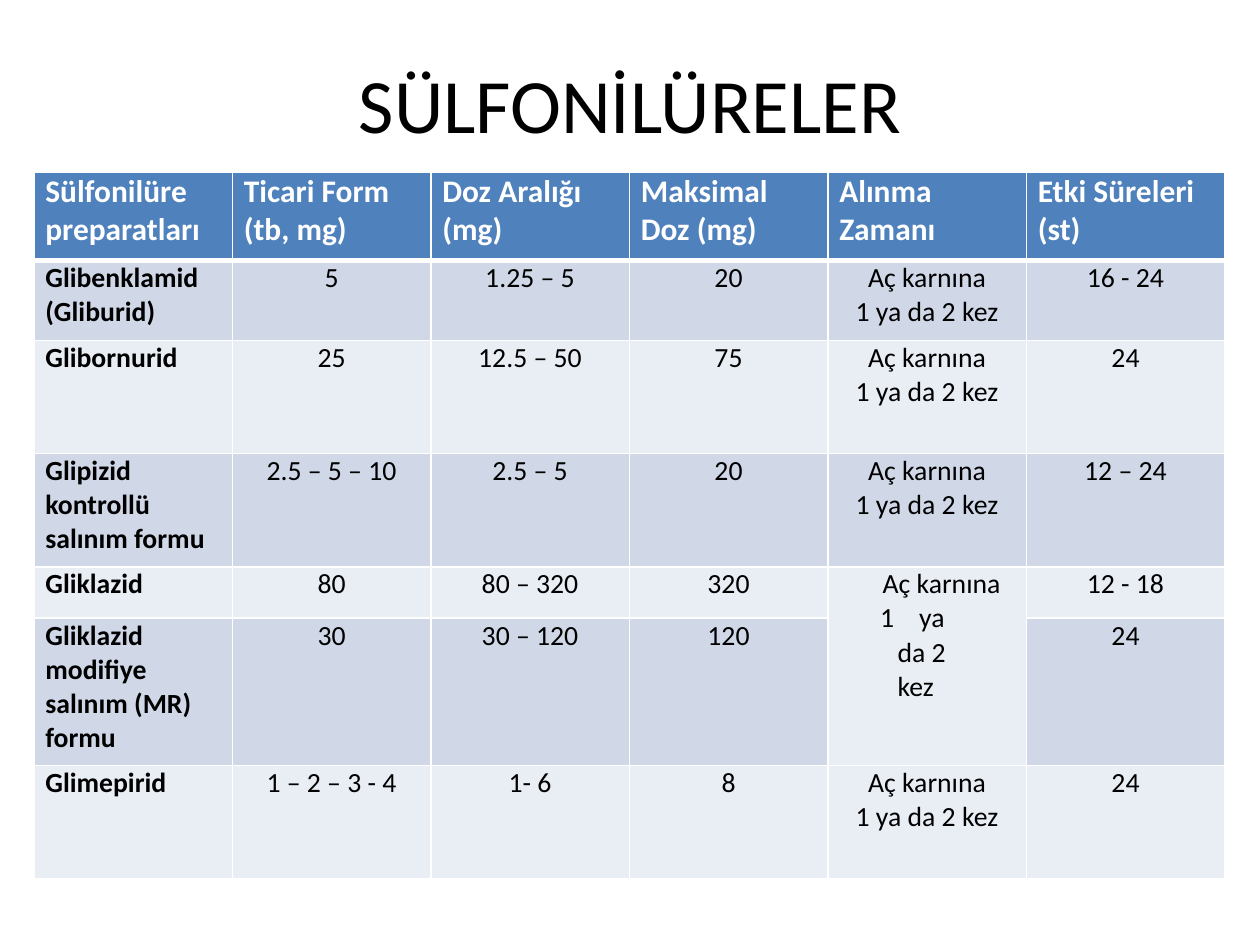
from dataclasses import dataclass

from lxml.etree import SubElement
from pptx import Presentation
from pptx.dml.color import RGBColor
from pptx.enum.text import MSO_ANCHOR, PP_ALIGN
from pptx.oxml.ns import qn
from pptx.util import Cm, Pt

WHITE = RGBColor(0xFF, 0xFF, 0xFF)
BLACK = RGBColor(0x00, 0x00, 0x00)
HEADER_BLUE = RGBColor(0x4F, 0x81, 0xBD)
BAND_DARK = RGBColor(0xD0, 0xD8, 0xE8)
BAND_LIGHT = RGBColor(0xE9, 0xED, 0xF4)

THIN, THICK = Pt(1.42), Pt(4.27)
TEXT_INDENT = Cm(0.33)


@dataclass(frozen=True)
class TextStyle:
    size: float
    color: RGBColor
    bold: bool = False
    alignment: PP_ALIGN = PP_ALIGN.CENTER
    indent: int = 0
    line_spacing: float = 1.0


TITLE = TextStyle(62.5, BLACK)
HEADER = TextStyle(25.5, WHITE, True, PP_ALIGN.LEFT, TEXT_INDENT)
DRUG_NAME = TextStyle(22.5, BLACK, True, PP_ALIGN.LEFT, TEXT_INDENT, 1.01)
VALUE = TextStyle(22.5, BLACK, line_spacing=1.01)
SHARED_TIMING = TextStyle(22.5, BLACK, False, PP_ALIGN.LEFT, Cm(1.57), 1.01)

TIMING = "Aç karnına\n1 ya da 2 kez"
ROWS = [
    ["Sülfonilüre\npreparatları", "Ticari Form\n(tb, mg)", "Doz Aralığı\n(mg)",
     "Maksimal\nDoz (mg)", "Alınma\nZamanı", "Etki Süreleri\n(st)"],
    ["Glibenklamid (Gliburid)", "5", "1.25 – 5", "20", TIMING, "16 - 24"],
    ["Glibornurid", "25", "12.5 – 50", "75", TIMING, "24"],
    ["Glipizid kontrollü salınım formu", "2.5 – 5 – 10", "2.5 – 5", "20", TIMING, "12 – 24"],
    ["Gliklazid", "80", "80 – 320", "320", "Aç karnına\n1\t\tya da 2 kez", "12 - 18"],
    ["Gliklazid modifiye salınım (MR) formu", "30", "30 – 120", "120", "", "24"],
    ["Glimepirid", "1 – 2 – 3 - 4", "1- 6", "8", TIMING, "24"],
]
ROW_HEIGHTS = [2.52, 2.29, 3.25, 3.25, 1.47, 4.22, 3.25]
COLUMN_WIDTH = Cm(5.69)
TIMING_COLUMN = 4
SHARED_ROW = 4


def set_attributes(target: object, values: dict) -> None:
    for name, value in values.items():
        setattr(target, name, value)


def write_text(text_frame, text: str, style: TextStyle) -> None:
    """Write one paragraph per line of text."""
    for index, line in enumerate(text.split("\n")):
        paragraph = text_frame.paragraphs[0] if index == 0 else text_frame.add_paragraph()
        paragraph.add_run().text = line
        if style.indent:
            paragraph._p.get_or_add_pPr().set("marL", str(style.indent))
        set_attributes(paragraph, {"alignment": style.alignment,
                                   "line_spacing": style.line_spacing})
        for run in paragraph.runs:
            set_attributes(run.font, {"name": "Calibri", "size": Pt(style.size),
                                      "bold": style.bold})
            run.font.color.rgb = style.color


def set_borders(cell, top: int, bottom: int) -> None:
    properties = cell._tc.get_or_add_tcPr()
    widths = {"a:lnL": THIN, "a:lnR": THIN, "a:lnT": top, "a:lnB": bottom}
    for position, (tag, width) in enumerate(widths.items()):
        line = properties.makeelement(qn(tag), {"w": str(width)})
        properties.insert(position, line)
        fill = SubElement(line, qn("a:solidFill"))
        SubElement(fill, qn("a:srgbClr"), val=str(WHITE))


def hang_shared_timing(paragraph) -> None:
    """Give the second line of the merged cell its hanging indent and tab stop."""
    properties = paragraph._p.get_or_add_pPr()
    for name, length in {"marL": Cm(2), "marR": Cm(1.57), "indent": Cm(-0.5)}.items():
        properties.set(name, str(length))
    tab_list = SubElement(properties, qn("a:tabLst"))
    SubElement(tab_list, qn("a:tab"), pos=str(Cm(2.44)), algn="l")


def cell_style(row: int, column: int) -> TextStyle:
    if row == 0:
        return HEADER
    if column == 0:
        return DRUG_NAME
    if (row, column) == (SHARED_ROW, TIMING_COLUMN):
        return SHARED_TIMING
    return VALUE


def add_title(slide) -> None:
    shape = slide.shapes.add_textbox(Cm(1.57), Cm(0.94), Cm(32.99), Cm(3.6))
    set_attributes(shape.text_frame, {
        "word_wrap": True, "vertical_anchor": MSO_ANCHOR.TOP, "margin_left": 0,
        "margin_right": 0, "margin_top": Cm(0.69), "margin_bottom": 0})
    write_text(shape.text_frame, "SÜLFONİLÜRELER", TITLE)


def add_drug_table(slide) -> None:
    column_count = len(ROWS[0])
    table = slide.shapes.add_table(len(ROWS), column_count, Cm(0.97), Cm(4.95),
                                   COLUMN_WIDTH * column_count,
                                   Cm(sum(ROW_HEIGHTS))).table
    for column in table.columns:
        column.width = COLUMN_WIDTH
    for row, height in zip(table.rows, ROW_HEIGHTS):
        row.height = Cm(height)

    for row, texts in enumerate(ROWS):
        band = HEADER_BLUE if row == 0 else BAND_DARK if row % 2 else BAND_LIGHT
        for column, text in enumerate(texts):
            cell = table.cell(row, column)
            set_attributes(cell, {"margin_left": 0, "margin_right": 0, "margin_top": 0,
                                  "margin_bottom": 0, "vertical_anchor": MSO_ANCHOR.TOP})
            cell.fill.solid()
            cell.fill.fore_color.rgb = band
            set_borders(cell, THICK if row == 1 else THIN, THICK if row == 0 else THIN)
            if text:
                write_text(cell.text_frame, text, cell_style(row, column))

    # One timing cell serves both gliclazide rows
    shared = table.cell(SHARED_ROW, TIMING_COLUMN)
    shared.merge(table.cell(SHARED_ROW + 1, TIMING_COLUMN))
    hang_shared_timing(shared.text_frame.paragraphs[1])


def main() -> None:
    presentation = Presentation()
    set_attributes(presentation, {"slide_width": Cm(36.12), "slide_height": Cm(27.1)})
    slide = presentation.slides.add_slide(presentation.slide_layouts[6])
    add_title(slide)
    add_drug_table(slide)
    presentation.save("out.pptx")


if __name__ == "__main__":
    main()
